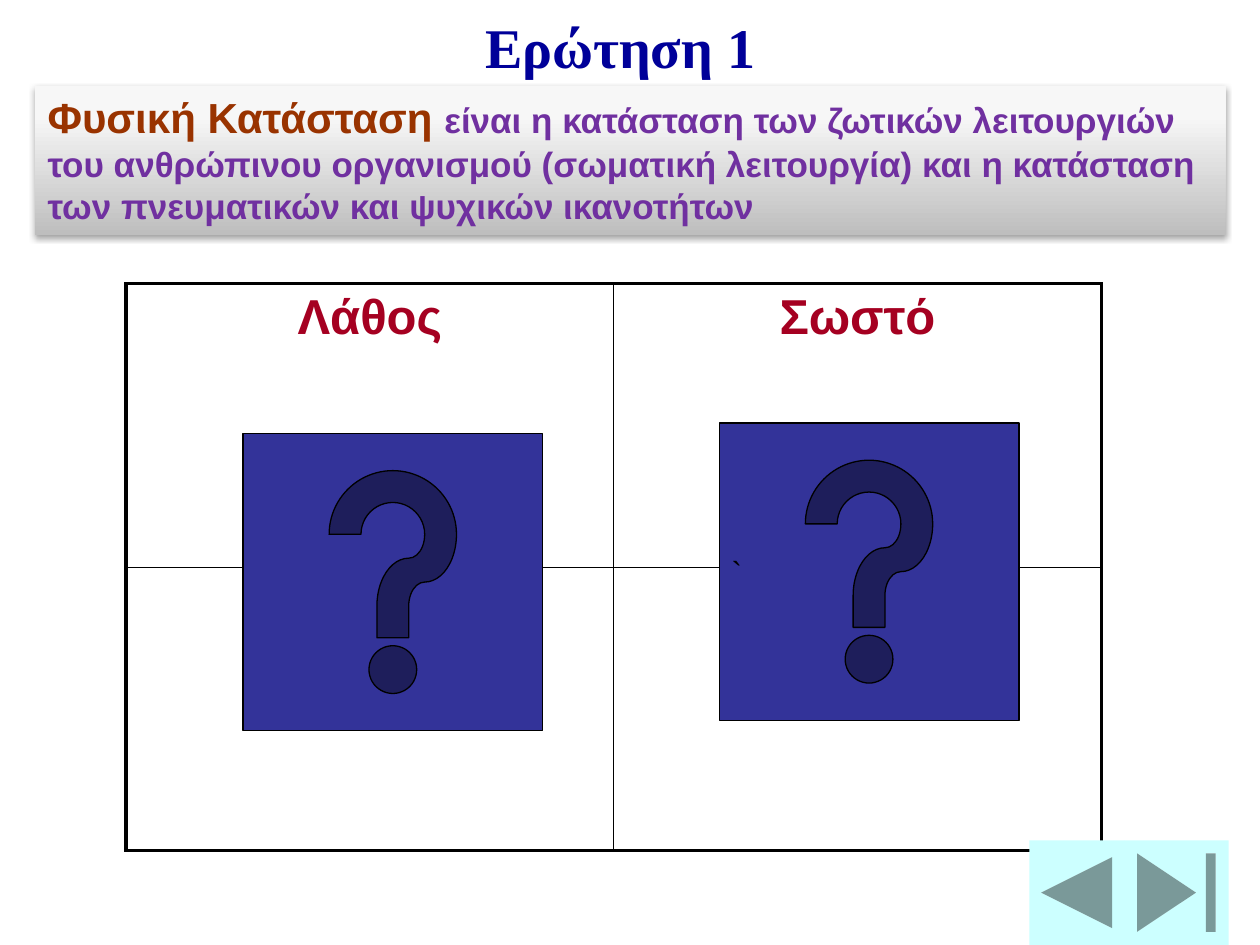
import lxml.etree
import pptx
import pptx.dml.color
import pptx.enum.shapes
import pptx.enum.text
import pptx.oxml
import pptx.oxml.ns
import pptx.util

Cm, Pt = pptx.util.Cm, pptx.util.Pt
SHAPES = pptx.enum.shapes.MSO_SHAPE
ANCHORS = pptx.enum.text.MSO_ANCHOR
NAMESPACE = pptx.oxml.ns.nsdecls("a")

# Content
COLORS = {"title": "000099", "term": "993300", "statement": "7030A0",
          "answer": "A50021", "ink": "000000", "cell": "FFFFFF",
          "help": "333399", "navigation": "CCFFFF"}
TITLE = [("Ερώτηση 1", 32, "title", "Times New Roman", True)]
STATEMENT = [
    ("Φυσική Κατάσταση ", 24, "term", "Arial", True),
    ("είναι η κατάσταση των ζωτικών λειτουργιών του ανθρώπινου οργανισμού "
     "(σωματική λειτουργία) και η κατάσταση των πνευματικών και ψυχικών "
     "ικανοτήτων", 20, "statement", "Arial", True),
]
ANSWERS = ["Λάθος", "Σωστό"]
TICK = [("`", 18, "ink", "Arial", False)]
GRADIENT = [(0, "BEBEBE"), (80, "F7F7F7"), (100, "F8F8F8")]

# Layout in centimetres: left, top, width, height
TITLE_AREA = (9.53, 0.13, 6.78, 1.63)
STATEMENT_AREA = (0.71, 1.73, 24, 3)
TABLE_AREA = (2.54, 5.72, 19.66, 11.43)
ROWS = COLUMNS = 2
OUTER, INNER = 2.25, 1
BUTTONS = [
    (SHAPES.ACTION_BUTTON_HELP, (14.5, 8.53, 6.04, 5.99), "help", TICK),
    (SHAPES.ACTION_BUTTON_HELP, (4.9, 8.74, 6.04, 5.99), "help", []),
    (SHAPES.ACTION_BUTTON_END, (22.66, 16.94, 2.11, 2.11), "navigation", []),
    (SHAPES.ACTION_BUTTON_BACK_OR_PREVIOUS, (20.75, 16.94, 1.91, 2.11),
     "navigation", []),
]


def color(name):
    return pptx.dml.color.RGBColor.from_string(COLORS[name])


def place(area):
    return [Cm(length) for length in area]


def write(para, spans, align=pptx.enum.text.PP_ALIGN.LEFT):
    para.alignment = align
    for text, size, ink, font, bold in spans:
        span = para.add_run()
        span.text = text
        span.font.size = Pt(size)
        span.font.name = font
        span.font.bold = bold
        span.font.color.rgb = color(ink)


def add_borders(cell, widths):
    properties = cell._tc.get_or_add_tcPr()
    for index, (side, width) in enumerate(zip("LRTB", widths)):
        properties.insert(index, pptx.oxml.parse_xml(
            f'<a:ln{side} {NAMESPACE} w="{Pt(width)}"><a:solidFill>'
            f'<a:srgbClr val="{COLORS["ink"]}"/></a:solidFill></a:ln{side}>'))


def add_panel_effects(panel):
    stops = "".join(f'<a:gs pos="{position * 1000}"><a:srgbClr val="{shade}"/></a:gs>'
                    for position, shade in GRADIENT)
    properties = panel._element.spPr
    gradient = pptx.oxml.parse_xml(
        f'<a:gradFill {NAMESPACE} rotWithShape="1"><a:gsLst>{stops}</a:gsLst>'
        '<a:lin ang="16200000" scaled="0"/></a:gradFill>')
    properties.find(pptx.oxml.ns.qn("a:prstGeom")).addnext(gradient)
    properties.append(pptx.oxml.parse_xml(
        f'<a:effectLst {NAMESPACE}><a:outerShdw blurRad="{Pt(3.1)}" '
        f'dist="{Pt(1.8)}" dir="5400000" rotWithShape="0">'
        f'<a:srgbClr val="{COLORS["ink"]}"><a:alpha val="35000"/></a:srgbClr>'
        '</a:outerShdw></a:effectLst>'))


deck = pptx.Presentation()
deck.slide_width, deck.slide_height = Cm(25.4), Cm(19.05)
page = deck.slides.add_slide(deck.slide_layouts[6])

# Answer table
table = page.shapes.add_table(ROWS, COLUMNS, *place(TABLE_AREA)).table
table.first_row = table.horz_banding = False
for row in range(ROWS):
    for column in range(COLUMNS):
        cell = table.cell(row, column)
        cell.fill.solid()
        cell.fill.fore_color.rgb = color("cell")
        on_edge = (column == 0, column == COLUMNS - 1, row == 0, row == ROWS - 1)
        add_borders(cell, [OUTER if edge else INNER for edge in on_edge])
for column, answer in enumerate(ANSWERS):
    write(table.cell(0, column).text_frame.paragraphs[0],
          [(answer, 28, "answer", "Arial", True)],
          pptx.enum.text.PP_ALIGN.CENTER)

# Title
title = page.shapes.add_textbox(*place(TITLE_AREA))
title.text_frame.word_wrap = True
write(title.text_frame.paragraphs[0], TITLE)

# Help and navigation buttons
for kind, area, fill, spans in BUTTONS:
    button = page.shapes.add_shape(kind, *place(area))
    button.shadow.inherit = False
    button.fill.solid()
    button.fill.fore_color.rgb = color(fill)
    if fill == "help":
        button.line.color.rgb = color("ink")
        button.line.width = Pt(0.75)
    else:
        button.line.fill.background()
    if spans:
        button.text_frame.word_wrap = False
        button.text_frame.vertical_anchor = ANCHORS.MIDDLE
        write(button.text_frame.paragraphs[0], spans)

# Statement panel
panel = page.shapes.add_shape(SHAPES.RECTANGLE, *place(STATEMENT_AREA))
panel.line.fill.background()
add_panel_effects(panel)
panel.text_frame.word_wrap = True
panel.text_frame.vertical_anchor = ANCHORS.TOP
write(panel.text_frame.paragraphs[0], STATEMENT)

deck.save("out.pptx")
